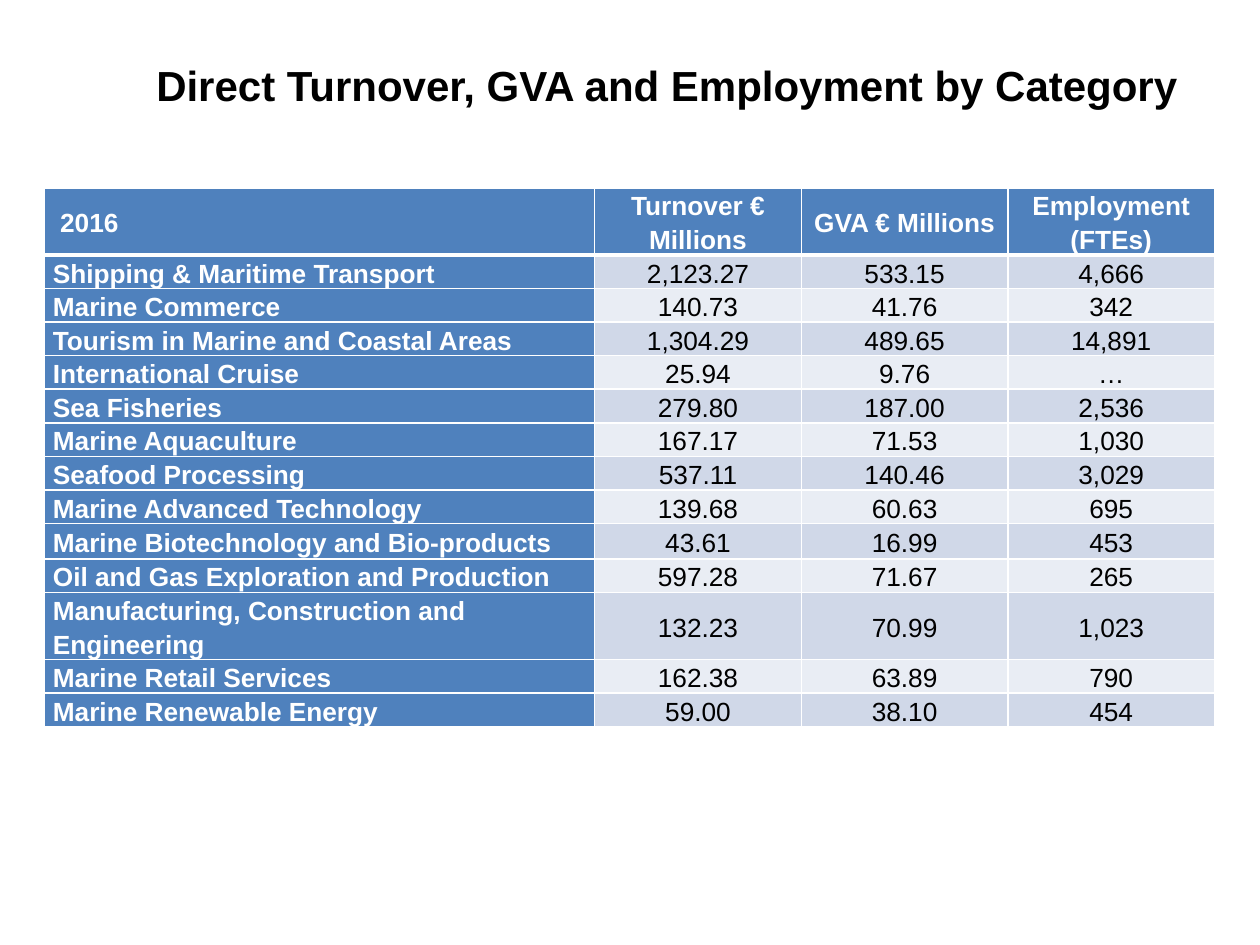
from lxml.etree import SubElement as Sub
from pptx import Presentation
from pptx.dml.color import RGBColor as Rgb
from pptx.enum.text import MSO_ANCHOR as Anchor, MSO_AUTO_SIZE as Fit, PP_ALIGN as Align
from pptx.oxml.ns import qn
from pptx.util import Inches, Pt

WIDE, HIGH = 10, 7.5
HUES = {"head": "4F81BD", "odd": "D0D8E8", "even": "E9EDF4", "line": "FFFFFF",
        "light": "FFFFFF", "dark": "000000"}
COLS = [4.37, 1.64, 1.64, 1.64]
HEAD, ROW, TALL = 0.39, 0.24, 0.28
TALL_ROW = 9
DATA = [
    (" 2016", "Turnover € Millions", "GVA € Millions", "Employment (FTEs)"),
    ("Shipping & Maritime Transport", "2,123.27", "533.15", "4,666"),
    ("Marine Commerce", "140.73", "41.76", "342"),
    ("Tourism in Marine and Coastal Areas", "1,304.29", "489.65", "14,891"),
    ("International Cruise", "25.94", "9.76", "…"),
    ("Sea Fisheries", "279.80", "187.00", "2,536"),
    ("Marine Aquaculture", "167.17", "71.53", "1,030"),
    ("Seafood Processing", "537.11", "140.46", "3,029"),
    ("Marine Advanced Technology", "139.68", "60.63", "695"),
    ("Marine Biotechnology and Bio-products", "43.61", "16.99", "453"),
    ("Oil and Gas Exploration and Production", "597.28", "71.67", "265"),
    ("Manufacturing, Construction and Engineering", "132.23", "70.99", "1,023"),
    ("Marine Retail Services", "162.38", "63.89", "790"),
    ("Marine Renewable Energy", "59.00", "38.10", "454"),
]


def apply(item, **look):
    for key, value in look.items():
        setattr(item, key, value)


def style(para, hue, size, bold, **look):
    apply(para, **look)
    font = para.runs[0].font
    apply(font, name="Arial", size=Pt(size), bold=bold)
    font.color.rgb = Rgb.from_string(HUES[hue])


def edge(cell, **sides):
    props = cell._tc.get_or_add_tcPr()
    for side, width in sides.items():
        line = Sub(props, qn(f"a:ln{side}"), w=str(Pt(width)))
        fill = Sub(line, qn("a:solidFill"))
        Sub(fill, qn("a:srgbClr"), val=HUES["line"])


def title(slide, box, text):
    left, top, width, height = map(Inches, box)
    shape = slide.shapes.title
    apply(shape, left=left, top=top, width=width, height=height)
    frame = shape.text_frame
    frame.text = text
    apply(frame, word_wrap=True, auto_size=Fit.NONE, vertical_anchor=Anchor.BOTTOM)
    style(frame.paragraphs[0], "dark", 24, True, alignment=Align.LEFT)


def fill_cell(cell, text, row, col):
    label = row == 0 or col == 0
    cell.text = text
    apply(cell, vertical_anchor=Anchor.MIDDLE, margin_left=Inches(0.07),
          margin_right=Inches(0.07), margin_top=0, margin_bottom=0)
    edge(cell, L=1, R=1, T=3 if row == 1 else 1, B=3 if row == 0 else 1)
    cell.fill.solid()
    band = "head" if label else ("even", "odd")[row % 2]
    cell.fill.fore_color.rgb = Rgb.from_string(HUES[band])
    style(cell.text_frame.paragraphs[0], "light" if label else "dark", 15, label,
          alignment=Align.CENTER if col else Align.LEFT,
          line_spacing=1.15, space_after=Pt(10 if row else 0))


def table(slide, box, data):
    frame = slide.shapes.add_table(len(data), len(COLS), *map(Inches, box))
    grid = frame.table
    for col, width in zip(grid.columns, COLS):
        col.width = Inches(box[2] * width / sum(COLS))
    sizes = {0: HEAD, TALL_ROW: TALL}
    for row, line in enumerate(data):
        grid.rows[row].height = Inches(sizes.get(row, ROW))
        for col, text in enumerate(line):
            fill_cell(grid.cell(row, col), text, row, col)


def main():
    deck = Presentation()
    apply(deck, slide_width=Inches(WIDE), slide_height=Inches(HIGH))
    slide = deck.slides.add_slide(deck.slide_layouts[5])
    title(slide, (0.114 * WIDE, 0.028 * HIGH, 0.85 * WIDE, 0.095 * HIGH),
          "Direct Turnover, GVA and Employment by Category")
    rows = HEAD + TALL + ROW * (len(DATA) - 2)
    table(slide, (0.035 * WIDE, 1.49, sum(COLS), rows), DATA)
    deck.save("out.pptx")


if __name__ == "__main__":
    main()
